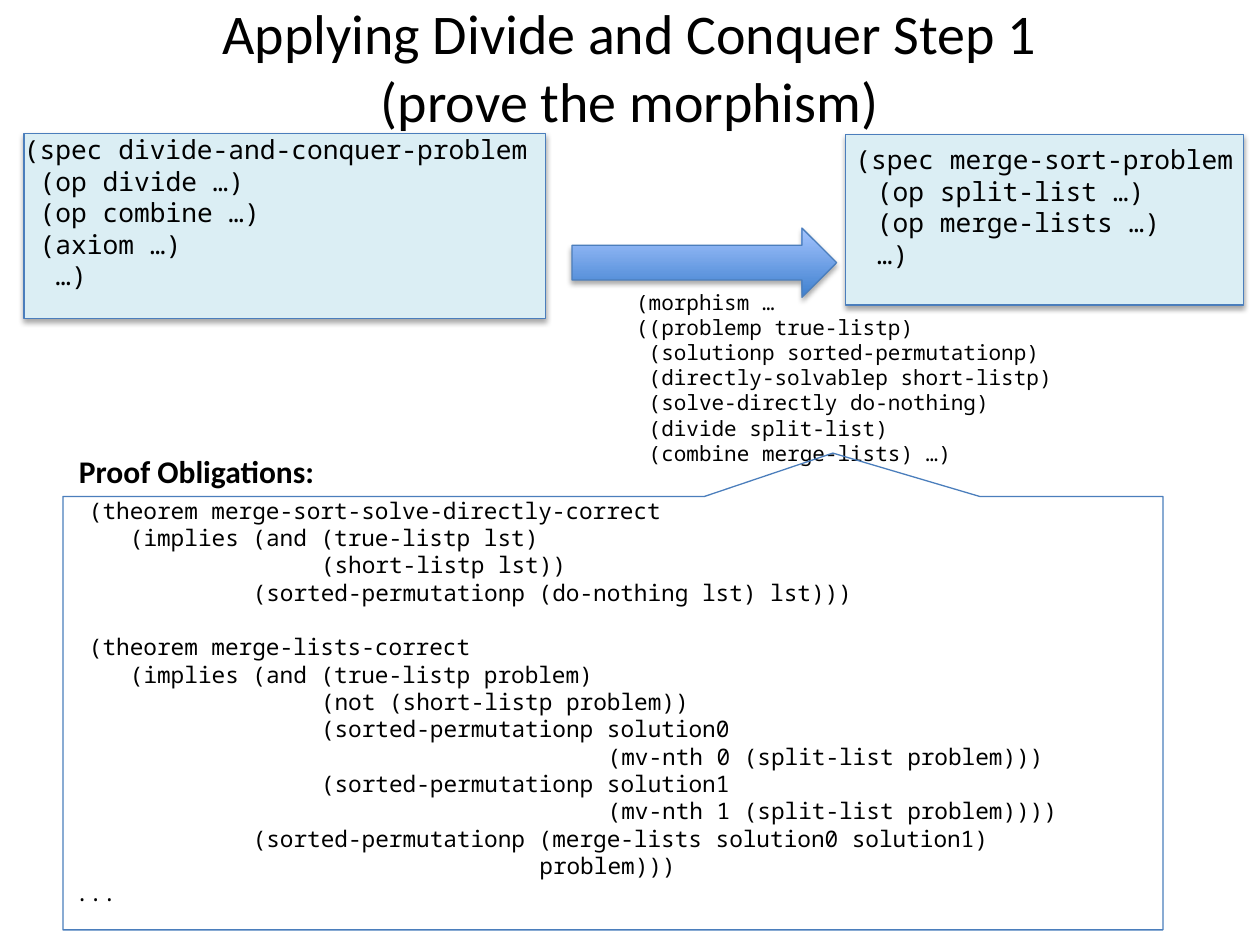
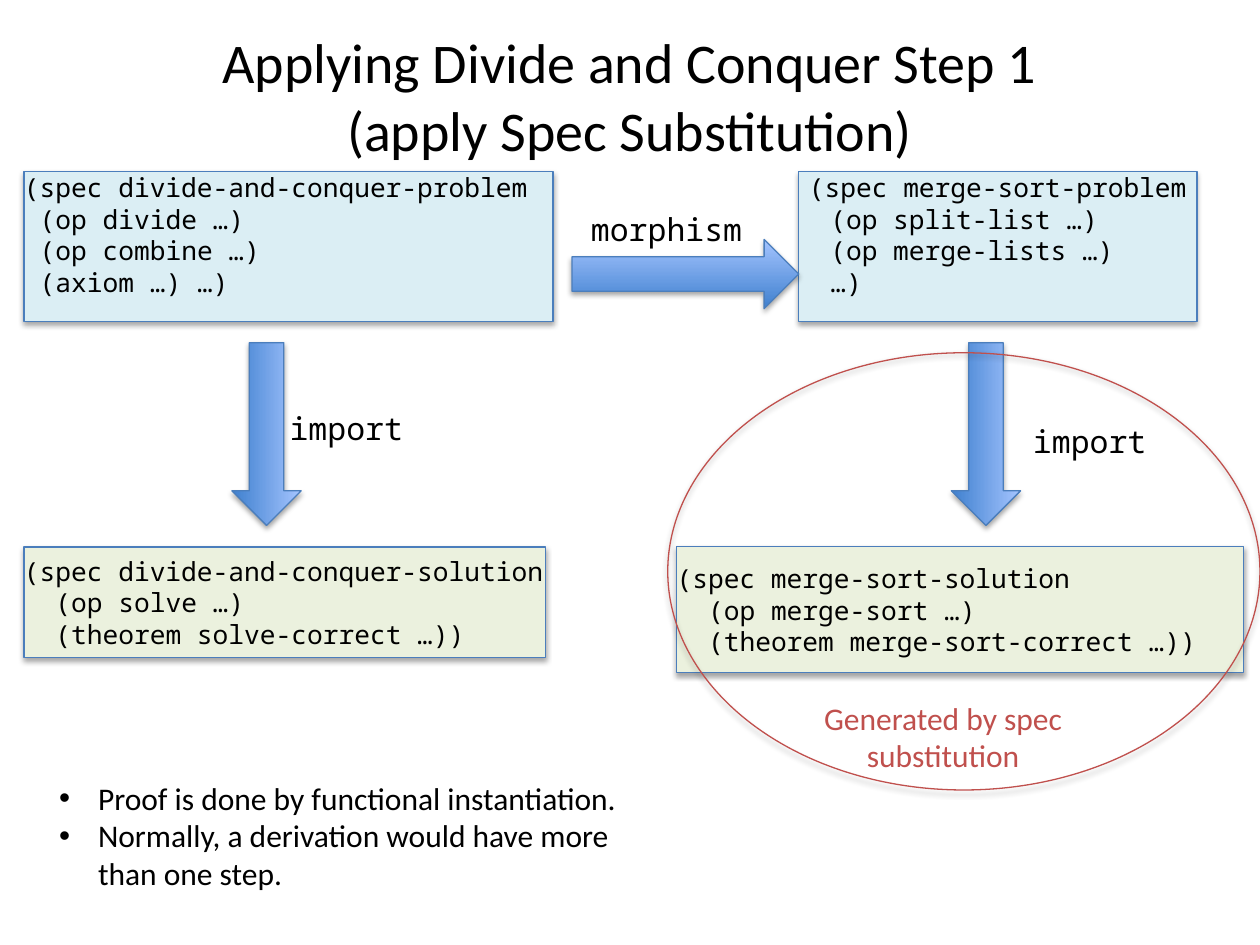
from dataclasses import dataclass
from typing import Optional

import pptx
import pptx.util
import pptx.dml.color
import pptx.enum.shapes
import pptx.enum.text
import pptx.oxml
import pptx.oxml.ns

Pt = pptx.util.Pt
Inches = pptx.util.Inches
SHAPE = pptx.enum.shapes.MSO_SHAPE
ALIGN = pptx.enum.text.PP_ALIGN
ANCHOR = pptx.enum.text.MSO_ANCHOR

WIDTH, HEIGHT = Inches(10), Inches(7.5)
COL, ROW = WIDTH / 100, HEIGHT / 75
SANS, MONO = "Calibri", "Noto Sans Mono"
CHAR_WIDTH, LINE_HEIGHT = 0.6, 1.2
COLORS = {
    "text": "000000",
    "line": "4B7EBC",
    "problem": "DBEEF4",
    "solution": "EBF1DE",
    "arrow_dark": "3F80CE",
    "arrow_light": "A4C4FF",
    "accent": "C0504D",
}

DIVIDE_PROBLEM = """(spec divide-and-conquer-problem
 (op divide …)
 (op combine …)
 (axiom …)"""
MERGE_PROBLEM = """(spec merge-sort-problem
  (op split-list …)
  (op merge-lists …)
  …)"""
DIVIDE_SOLUTION = """(spec divide-and-conquer-solution
  (op solve …)
  (theorem solve-correct …))"""
MERGE_SOLUTION = """(spec merge-sort-solution
  (op merge-sort …)
  (theorem merge-sort-correct …))"""
MORPHISM = """(morphism …
((problemp true-listp)
 (solutionp sorted-permutationp)
 (directly-solvablep short-listp)
 (solve-directly do-nothing)
 (divide split-list)
 (combine merge-lists) …)"""
OBLIGATIONS = """ (theorem merge-sort-solve-directly-correct
    (implies (and (true-listp lst)
                  (short-listp lst))
             (sorted-permutationp (do-nothing lst) lst)))

 (theorem merge-lists-correct
    (implies (and (true-listp problem)
                  (not (short-listp problem))
                  (sorted-permutationp solution0
                                       (mv-nth 0 (split-list problem)))
                  (sorted-permutationp solution1
                                       (mv-nth 1 (split-list problem))))
             (sorted-permutationp (merge-lists solution0 solution1)
                                  problem)))
..."""
REMARKS = """Proof is done by functional instantiation.
Normally, a derivation would have more than one step."""


@dataclass(frozen=True)
class Area:
    """A rectangle in grid columns and rows."""
    x: float
    y: float
    w: float
    h: float

    def emu(self) -> tuple[int, int, int, int]:
        """Return left, top, width and height in EMU."""
        return (round(self.x * COL), round(self.y * ROW),
                round(self.w * COL), round(self.h * ROW))


@dataclass(frozen=True)
class SpecBox:
    """A filled box of code; a top inset in rows pins its text to the top."""
    text: str
    area: Area
    fill: str
    top: Optional[float] = None
    centered_head: bool = False


@dataclass(frozen=True)
class Arrow:
    """A block arrow, turned by an angle in degrees."""
    area: Area
    angle: int = 0


@dataclass(frozen=True)
class Label:
    """Free text with its font."""
    text: str
    area: Area
    size: float = 18
    font: str = MONO
    color: str = "text"
    bold: bool = False
    centered: bool = False
    anchor: ANCHOR = ANCHOR.MIDDLE
    bullets: bool = False


def rgb(name: str) -> pptx.dml.color.RGBColor:
    """Look up a colour by name."""
    return pptx.dml.color.RGBColor.from_string(COLORS[name])


def style_run(r, size: float, font: str, color: str = "text", bold: bool = False) -> None:
    """Set the font of one run."""
    r.font.size, r.font.name, r.font.bold = Pt(size), font, bold
    r.font.color.rgb = rgb(color)


def write(tf, text: str, size: float, font: str, color: str = "text",
          bold: bool = False, align: ALIGN = ALIGN.LEFT) -> None:
    """Write lines as paragraphs, turning leading spaces and empty lines into spacing."""
    p, gap = tf.paragraphs[0], 0
    for i, line in enumerate(text.split("\n")):
        if not line:
            gap += size * LINE_HEIGHT
            continue
        p = tf.add_paragraph() if i else p
        code = line.lstrip()
        indent = (len(line) - len(code)) * CHAR_WIDTH * size
        p.alignment, p.space_before, gap = align, Pt(gap), 0
        p._p.get_or_add_pPr().set("marL", str(int(Pt(indent))))
        r = p.add_run()
        r.text = code
        style_run(r, size, font, color, bold)


def add_shadow(shape) -> None:
    """Give a shape the soft shadow below it."""
    shape._element.spPr.append(pptx.oxml.parse_xml(
        f'<a:effectLst {pptx.oxml.ns.nsdecls("a")}>'
        f'<a:outerShdw blurRad="{int(Pt(3.1))}" dist="{int(Pt(1.8))}" dir="5400000" rotWithShape="0">'
        '<a:srgbClr val="000000"><a:alpha val="35000"/></a:srgbClr>'
        '</a:outerShdw></a:effectLst>'))


def add_outline(s, kind: SHAPE, area: Area, line: str = "line",
                fill: Optional[str] = None, shadow: bool = True):
    """Add a preset shape with a thin line."""
    sp = s.shapes.add_shape(kind, *area.emu())
    if fill:
        sp.fill.solid()
        sp.fill.fore_color.rgb = rgb(fill)
    else:
        sp.fill.background()
    sp.line.color.rgb, sp.line.width = rgb(line), Pt(0.75)
    if shadow:
        add_shadow(sp)
    else:
        sp.shadow.inherit = False
    return sp


def add_spec(s, box: SpecBox) -> None:
    """Add a box of specification code."""
    tf = add_outline(s, SHAPE.RECTANGLE, box.area, fill=box.fill).text_frame
    tf.margin_left = tf.margin_right = 0
    tf.word_wrap, tf.vertical_anchor = True, ANCHOR.MIDDLE
    if box.top is not None:
        tf.vertical_anchor, tf.margin_top = ANCHOR.TOP, round(box.top * ROW)
    write(tf, box.text, 15, MONO)
    if box.centered_head:
        tf.paragraphs[0].alignment = ALIGN.CENTER


def add_arrow(s, arrow: Arrow) -> None:
    """Add a block arrow with a gradient."""
    sp = add_outline(s, SHAPE.RIGHT_ARROW, arrow.area)
    sp.fill.gradient()
    sp.fill.gradient_angle = 90
    for stop, name in zip(sp.fill.gradient_stops, ("arrow_dark", "arrow_light")):
        stop.color.rgb = rgb(name)
    sp.rotation = arrow.angle


def add_label(s, label: Label) -> None:
    """Add a text box, with bullets if asked for."""
    tf = s.shapes.add_textbox(*label.area.emu()).text_frame
    tf.word_wrap, tf.vertical_anchor = True, label.anchor
    write(tf, label.text, label.size, label.font, label.color, label.bold,
          ALIGN.CENTER if label.centered else ALIGN.LEFT)
    for p in tf.paragraphs if label.bullets else ():
        pPr = p._p.get_or_add_pPr()
        pPr.set("marL", str(Inches(0.31)))
        pPr.set("indent", str(-Inches(0.31)))
        for tag in ('buFont typeface="Arial"', 'buChar char="•"'):
            pPr.append(pptx.oxml.parse_xml(f'<a:{tag} {pptx.oxml.ns.nsdecls("a")}/>'))


def add_slide(prs, subtitle: str, title_area: Area):
    """Add a slide with the shared two-line title."""
    s = prs.slides.add_slide(prs.slide_layouts[5])
    title = s.shapes.title
    title.left, title.top, title.width, title.height = title_area.emu()
    tf = title.text_frame
    tf.auto_size = pptx.enum.text.MSO_AUTO_SIZE.NONE
    tf.vertical_anchor = ANCHOR.MIDDLE
    p = tf.paragraphs[0]
    p.alignment = ALIGN.CENTER
    for i, text in enumerate(("Applying Divide and Conquer Step 1", subtitle)):
        if i:
            p.add_line_break()
        r = p.add_run()
        r.text = text
        style_run(r, 32, SANS)
    return s


def add_obligations(s) -> None:
    """Add the callout with the proof obligations."""
    sp = add_outline(s, SHAPE.RECTANGULAR_CALLOUT, Area(5, 39.4, 87.3, 34.4), shadow=False)
    sp.adjustments[0], sp.adjustments[1] = 0.2, -0.6
    tf = sp.text_frame
    tf.word_wrap, tf.vertical_anchor, tf.margin_top = True, ANCHOR.TOP, 0
    write(tf, OBLIGATIONS, 13, MONO)


def build_morphism_slide(prs) -> None:
    """Build the slide that proves the morphism."""
    s = add_slide(prs, "(prove the morphism)", Area(5, 0.3, 90, 9.9))
    add_spec(s, SpecBox(DIVIDE_PROBLEM + "\n  …)", Area(1.9, 10.6, 41.4, 14.7), "problem", 0))
    add_spec(s, SpecBox(MERGE_PROBLEM, Area(67.1, 10.7, 31.6, 13.5), "problem", 0.7, True))
    add_arrow(s, Arrow(Area(45.4, 18.1, 21, 5.5)))
    add_label(s, Label(MORPHISM, Area(49.5, 22.5, 55.1 - 4.6, 14.9), 12))
    add_obligations(s)
    add_label(s, Label("Proof Obligations:", Area(1.9, 35.4, 27.4, 4), font=SANS,
                       bold=True, centered=True, anchor=ANCHOR.TOP))


def build_substitution_slide(prs) -> None:
    """Build the slide that applies the substitution."""
    s = add_slide(prs, "(apply Spec Substitution)", Area(5, 1.3, 90, 12.5))
    for box in (
        SpecBox(DIVIDE_PROBLEM + " …)", Area(1.9, 13.6, 42, 11.9), "problem", 0),
        SpecBox(DIVIDE_SOLUTION, Area(1.9, 43.4, 41.4, 8.8), "solution"),
        SpecBox(MERGE_PROBLEM, Area(63.4, 13.6, 31.6, 11.9), "problem", 0, True),
        SpecBox(MERGE_SOLUTION, Area(53.7, 43.4, 45, 10), "solution"),
    ):
        add_spec(s, box)
    add_arrow(s, Arrow(Area(45.4, 19, 18, 5.5)))
    for x in (13.9, 71):
        add_arrow(s, Arrow(Area(x, 31.7, 14.5, 5.5), 90))
    for x, y in ((22, 26.2), (81, 27.2)):
        add_label(s, Label("import", Area(x, y, 12.3, 15.6)))
    add_label(s, Label("morphism", Area(43.4, 15.3, 19, 5.7), centered=True))
    add_outline(s, SHAPE.OVAL, Area(53, 28, 47, 34.7), "accent")
    add_label(s, Label("Generated by spec substitution", Area(61.6, 55.6, 26.5, 5.7),
                       font=SANS, color="accent", centered=True))
    add_label(s, Label(REMARKS, Area(3.7, 61.3, 47.5, 10.1), font=SANS,
                       anchor=ANCHOR.TOP, bullets=True))


def main() -> None:
    """Build and save the presentation."""
    prs = pptx.Presentation()
    prs.slide_width, prs.slide_height = WIDTH, HEIGHT
    build_morphism_slide(prs)
    build_substitution_slide(prs)
    prs.save("out.pptx")


if __name__ == "__main__":
    main()
